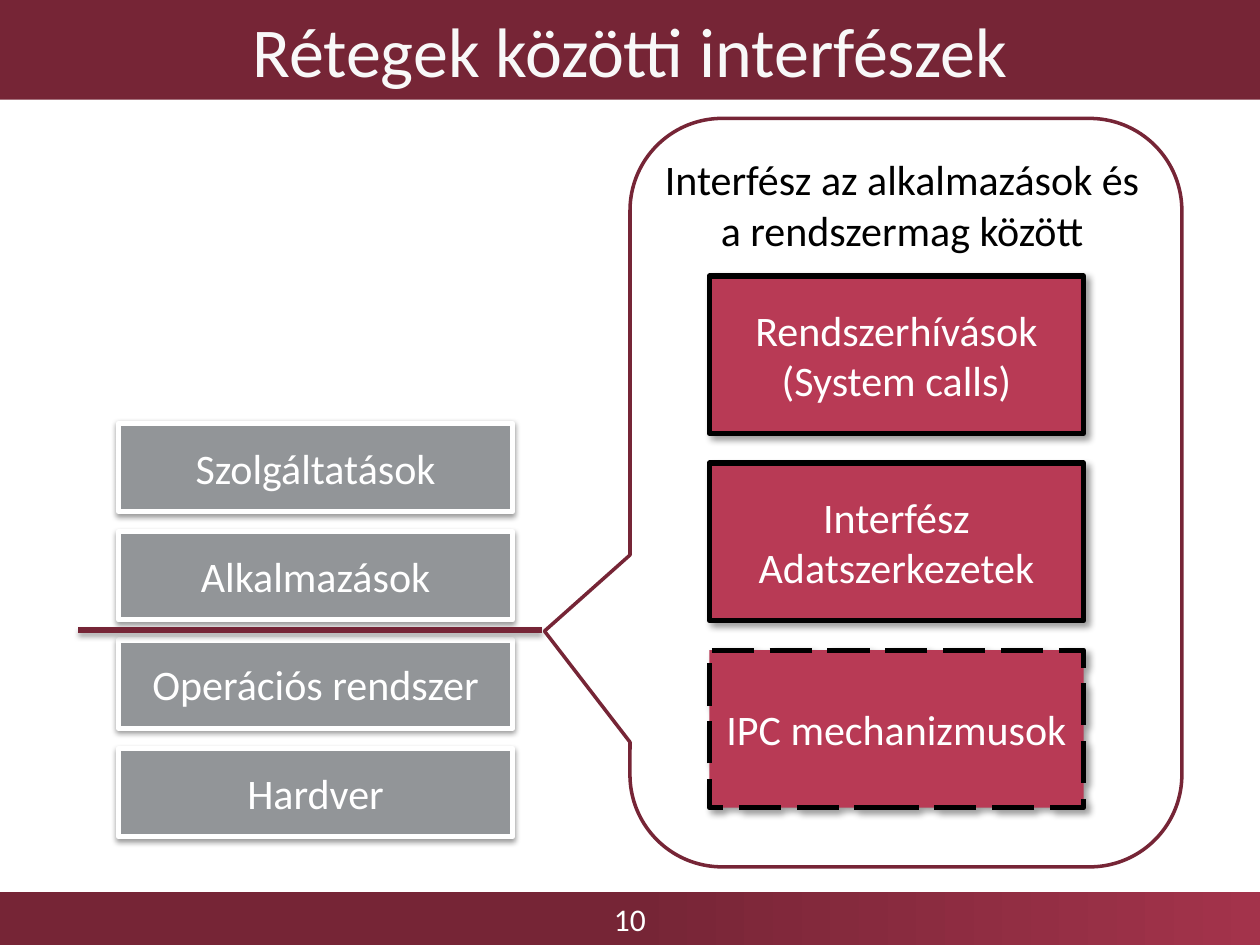
from dataclasses import dataclass
from typing import Optional

from lxml import etree
from pptx import Presentation
from pptx.dml.color import RGBColor
from pptx.enum.dml import MSO_LINE
from pptx.enum.shapes import MSO_CONNECTOR, MSO_SHAPE
from pptx.enum.text import MSO_ANCHOR, PP_ALIGN
from pptx.oxml.ns import qn
from pptx.util import Inches, Pt

RECT = MSO_SHAPE.RECTANGLE
CALLOUT = MSO_SHAPE.ROUNDED_RECTANGULAR_CALLOUT
STRAIGHT = MSO_CONNECTOR.STRAIGHT
LONG_DASH = MSO_LINE.LONG_DASH
MIDDLE = MSO_ANCHOR.MIDDLE
TOP = MSO_ANCHOR.TOP
CENTER = PP_ALIGN.CENTER


@dataclass(frozen=True)
class Theme:
    font: str = "Calibri"
    maroon: str = "762536"
    maroon_light: str = "A3334B"
    crimson: str = "B83A55"
    gray: str = "929598"
    white: str = "FFFFFF"
    off_white: str = "F8F8F8"
    black: str = "000000"
    title_size: int = 40
    body_size: int = 24
    number_size: int = 18


@dataclass(frozen=True)
class Shadow:
    alpha: int  # percent
    blur: float  # points
    dist: float  # points
    angle: int  # degrees


@dataclass(frozen=True)
class Box:
    x: float
    y: float
    w: float
    h: float


@dataclass(frozen=True)
class Part:
    lines: tuple[str, ...]
    dash: Optional[MSO_LINE] = None


THEME = Theme()
LAYER_SHADOW = Shadow(38, 3.1, 1.6, 90)
BOUNDARY_SHADOW = Shadow(35, 3.1, 1.8, 90)
PART_SHADOW = Shadow(40, 4, 3, 45)

LAYERS = ("Szolgáltatások", "Alkalmazások", "Operációs rendszer", "Hardver")
PARTS = (
    Part(("Rendszerhívások", "(System calls)")),
    Part(("Interfész Adatszerkezetek",)),
    Part(("IPC mechanizmusok",), LONG_DASH),
)


def rgb(color: str) -> RGBColor:
    return RGBColor.from_string(color)


def add_shadow(sp, shadow: Shadow) -> None:
    effects = etree.SubElement(sp._element.spPr, qn("a:effectLst"))
    outer = etree.SubElement(
        effects, qn("a:outerShdw"), blurRad=str(Pt(shadow.blur)),
        dist=str(Pt(shadow.dist)), dir=str(shadow.angle * 60000), rotWithShape="0")
    color = etree.SubElement(outer, qn("a:srgbClr"), val=THEME.black)
    etree.SubElement(color, qn("a:alpha"), val=str(shadow.alpha * 1000))


def write_text(sp, *lines: str, size: int = THEME.body_size, color: str = THEME.white,
               anchor: MSO_ANCHOR = MIDDLE, wrap: bool = True) -> None:
    tf = sp.text_frame
    tf.word_wrap = wrap
    tf.vertical_anchor = anchor
    for i, line in enumerate(lines):
        p = tf.paragraphs[0] if i == 0 else tf.add_paragraph()
        p.alignment = CENTER
        r = p.add_run()
        r.text = line
        r.font.name = THEME.font
        r.font.size = Pt(size)
        r.font.color.rgb = rgb(color)


def add_box(s, box: Box, fill: str, line: Optional[str] = None, width: float = 3,
            dash: Optional[MSO_LINE] = None, shadow: Optional[Shadow] = None,
            kind: MSO_SHAPE = RECT):
    sp = s.shapes.add_shape(kind, Inches(box.x), Inches(box.y), Inches(box.w), Inches(box.h))
    sp.fill.solid()
    sp.fill.fore_color.rgb = rgb(fill)
    if line is None:
        sp.line.fill.background()
    else:
        sp.line.color.rgb = rgb(line)
        sp.line.width = Pt(width)
        if dash is not None:
            sp.line.dash_style = dash
    if shadow is None:
        sp.shadow.inherit = False
    else:
        add_shadow(sp, shadow)
    return sp


def add_bars(s) -> None:
    footer = add_box(s, Box(0, 7.08, 10, 0.42), THEME.maroon)
    footer.fill.gradient()
    footer.fill.gradient_angle = 0
    stops = ((0.5, THEME.maroon), (1, THEME.maroon_light))
    for stop, (position, color) in zip(footer.fill.gradient_stops, stops):
        stop.position = position
        stop.color.rgb = rgb(color)
    write_text(footer, "10", size=THEME.number_size, wrap=False)

    title = add_box(s, Box(0, 0, 10, 0.79), THEME.maroon)
    write_text(title, "Rétegek közötti interfészek",
               size=THEME.title_size, color=THEME.off_white)


def add_layers(s) -> None:
    for i, name in enumerate(LAYERS):
        sp = add_box(s, Box(0.94, 3.36 + i * 0.86, 3.13, 0.7), THEME.gray,
                     line=THEME.white, shadow=LAYER_SHADOW)
        write_text(sp, name)

    # Boundary between applications and the operating system
    boundary = s.shapes.add_connector(STRAIGHT, Inches(0.62), Inches(5), Inches(4.3), Inches(5))
    boundary.line.color.rgb = rgb(THEME.maroon)
    boundary.line.width = Pt(3)
    add_shadow(boundary, BOUNDARY_SHADOW)


def add_interface(s) -> None:
    callout = add_box(s, Box(5, 0.94, 4.38, 5.94), THEME.white,
                      line=THEME.maroon, width=2, kind=CALLOUT)
    for i, value in enumerate((-0.655, 0.185, 0.167)):
        callout.adjustments[i] = value

    heading = s.shapes.add_textbox(Inches(5.16), Inches(1.17), Inches(4), Inches(0.91))
    write_text(heading, "Interfész az alkalmazások és", "a rendszermag között",
               color=THEME.black, anchor=TOP, wrap=False)

    for i, part in enumerate(PARTS):
        sp = add_box(s, Box(5.63, 2.19 + i * 1.485, 2.97, 1.25), THEME.crimson,
                     line=THEME.black, dash=part.dash, shadow=PART_SHADOW)
        write_text(sp, *part.lines)


def main() -> None:
    prs = Presentation()
    prs.slide_width = Inches(10)
    prs.slide_height = Inches(7.5)
    s = prs.slides.add_slide(prs.slide_layouts[6])
    add_bars(s)
    add_layers(s)
    add_interface(s)
    prs.save("out.pptx")


if __name__ == "__main__":
    main()
